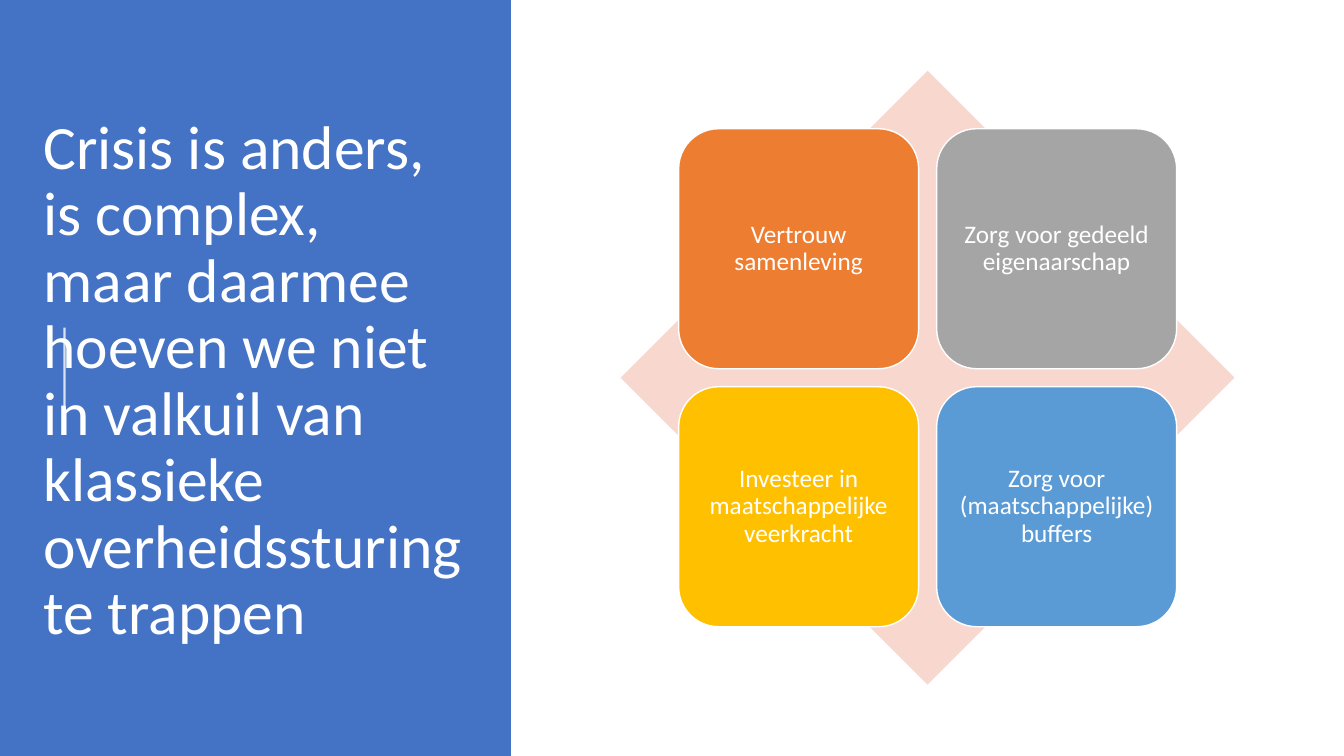
from lxml import etree
from pptx import Presentation
from pptx.dml.color import RGBColor
from pptx.enum import shapes as s, text as t
from pptx.oxml.ns import qn
from pptx.util import Pt

TITLE = ("Crisis is anders, is complex, maar daarmee hoeven we niet "
         "in valkuil van klassieke overheidssturing te trappen")
CARDS = [
    [("Vertrouw samenleving", "ED7D31"), ("Zorg voor gedeeld eigenaarschap", "A5A5A5")],
    [("Investeer in maatschappelijke veerkracht", "FFC000"),
     ("Zorg voor (maatschappelijke) buffers", "5B9BD5")],
]
THEME = {"font": "Calibri", "ink": "FFFFFF", "panel": "4472C4", "diamond": "F8D7CE",
         "title": 44, "card": 18}
WIDE, HIGH = 960, 540
MID_X, MID_Y = 662.6, 269.8
DIAMOND, CARD, GAP = 438.5, 171.4, 12.9


def set_all(item, values):
    for name, value in values.items():
        setattr(item, name, value)


def write(shape, words, size, align, inset):
    """Fill a shape with one paragraph in the slide's text style."""
    frame = shape.text_frame
    frame.text = words
    set_all(frame, {"word_wrap": True, "auto_size": t.MSO_AUTO_SIZE.NONE,
                    "vertical_anchor": t.MSO_ANCHOR.MIDDLE})
    set_all(frame, {f"margin_{side}": Pt(gap) for side, gap in inset.items()})
    para = frame.paragraphs[0]
    set_all(para, {"alignment": align, "line_spacing": 0.9, "space_before": Pt(0)})
    font = para.runs[0].font
    set_all(font, {"name": THEME["font"], "size": Pt(size), "bold": False})
    font.color.rgb = RGBColor.from_string(THEME["ink"])


def add_block(slide, kind, box, fill, edge=None):
    shape = slide.shapes.add_shape(kind, *map(Pt, box))
    shape.shadow.inherit = False
    shape.fill.solid()
    shape.fill.fore_color.rgb = RGBColor.from_string(fill)
    if edge:
        shape.line.color.rgb = RGBColor.from_string(edge)
        shape.line.width = Pt(1)
    else:
        shape.line.fill.background()
    return shape


def add_panel(slide):
    """Place the title over a full-height panel with a thin accent line."""
    title = slide.shapes.title
    panel = add_block(slide, s.MSO_SHAPE.RECTANGLE, (0, 0, 365, HIGH), THEME["panel"])
    title.element.addprevious(panel.element)
    set_all(title, dict(zip(("left", "top", "width", "height"),
                            map(Pt, (23.8, 56.2, 315.4, 433.4)))))
    write(title, TITLE, THEME["title"], t.PP_ALIGN.LEFT,
          {"left": 7.2, "right": 7.2, "top": 3.6, "bottom": 3.6})
    rule = slide.shapes.add_connector(
        s.MSO_CONNECTOR.STRAIGHT, *map(Pt, (46.1, 306, 46.1, 234)))
    rule.line.width = Pt(1.5)
    rule.line.color.rgb = RGBColor.from_string(THEME["ink"])
    props = rule.element.spPr
    tint = next(props.iter(qn("a:srgbClr")))
    etree.SubElement(tint, qn("a:alpha"), val="80000")
    etree.SubElement(props, qn("a:effectLst"))


def add_matrix(slide):
    """Centre a two-by-two grid of cards on the diamond."""
    add_block(slide, s.MSO_SHAPE.DIAMOND,
              (MID_X - DIAMOND / 2, MID_Y - DIAMOND / 2, DIAMOND, DIAMOND), THEME["diamond"])
    step, half = CARD + GAP, CARD + GAP / 2
    inset = dict.fromkeys(("left", "right", "top", "bottom"), 5)
    for row, cards in enumerate(CARDS):
        for col, (words, fill) in enumerate(cards):
            box = (MID_X - half + col * step, MID_Y - half + row * step, CARD, CARD)
            card = add_block(slide, s.MSO_SHAPE.ROUNDED_RECTANGLE, box, fill, THEME["ink"])
            write(card, words, THEME["card"], t.PP_ALIGN.CENTER, inset)


def main():
    deck = Presentation()
    set_all(deck, {"slide_width": Pt(WIDE), "slide_height": Pt(HIGH)})
    slide = deck.slides.add_slide(deck.slide_layouts.get_by_name("Title Only"))
    add_panel(slide)
    add_matrix(slide)
    deck.save("out.pptx")


if __name__ == "__main__":
    main()
